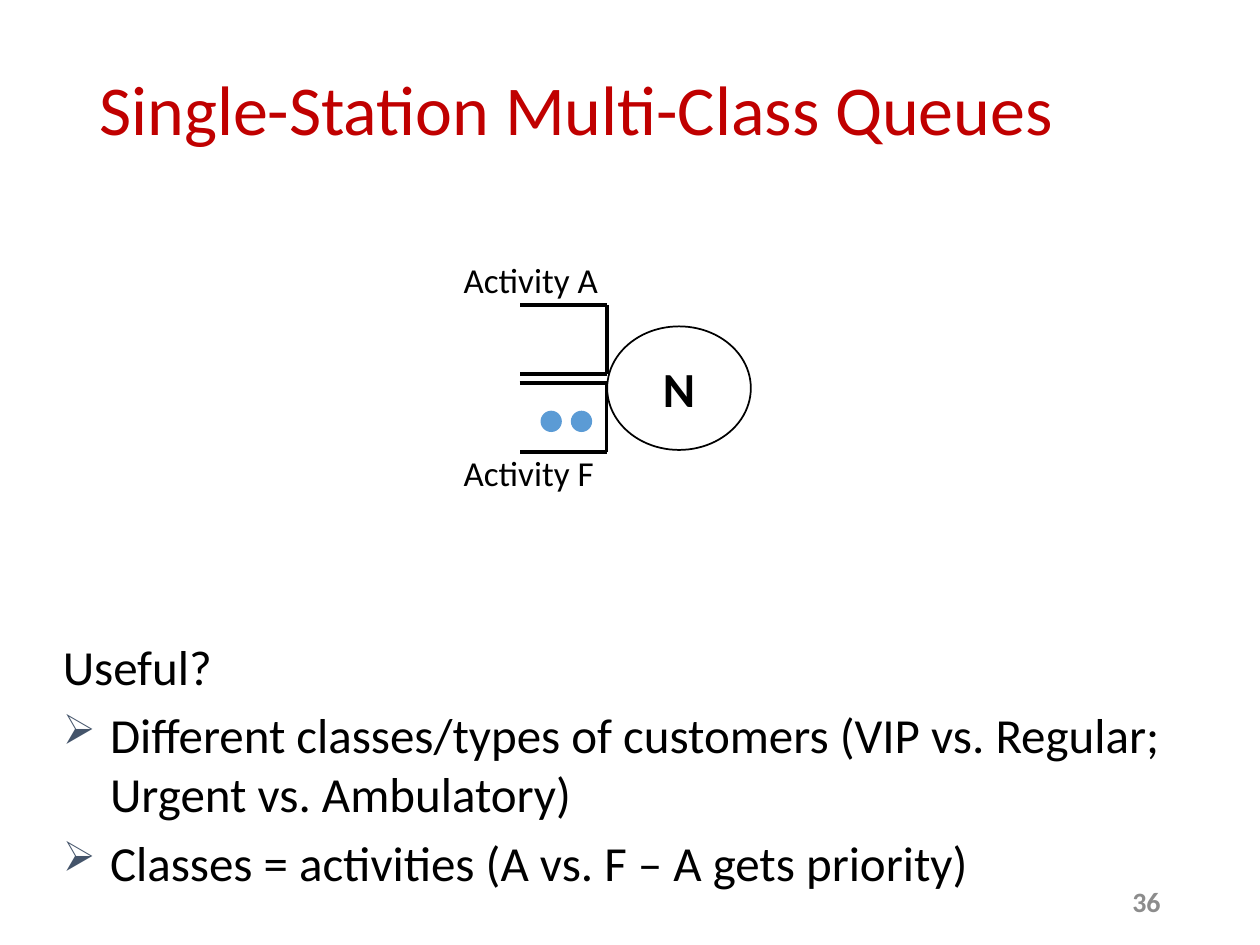
from typing import NamedTuple

from lxml import etree
from pptx import Presentation
from pptx.dml.color import RGBColor
from pptx.enum.shapes import MSO_CONNECTOR, MSO_SHAPE
from pptx.enum.text import MSO_ANCHOR, PP_ALIGN
from pptx.oxml.ns import qn
from pptx.util import Pt

LEFT, CENTER, RIGHT = PP_ALIGN.LEFT, PP_ALIGN.CENTER, PP_ALIGN.RIGHT
TOP, MIDDLE = MSO_ANCHOR.TOP, MSO_ANCHOR.MIDDLE
ELLIPSE = MSO_SHAPE.OVAL
STRAIGHT = MSO_CONNECTOR.STRAIGHT

FONT = "Calibri"
BLACK, RED, GRAY = "000000", "C00000", "8C8C8C"
BLUE, SLATE = "5B9BD5", "44546A"
BODY_SIZE = 28
BULLET_INDENT = 27


class Box(NamedTuple):
    left: float
    top: float
    width: float
    height: float

    def lengths(self) -> list:
        return [Pt(value) for value in self]


class Queue(NamedTuple):
    label: str
    label_top: float
    box: Box


QUEUES = [
    Queue("Activity A", 144, Box(297.4, 174.2, 49.6, 39.6)),
    Queue("Activity F", 254.2, Box(297, 218.9, 49.6, 39.6)),
]
STATION = Box(347, 186.5, 82.1, 70.6)
CUSTOMER_SIZE = 12.2
CUSTOMER_LEFTS = (326.2, 308.9)
CUSTOMER_TOP = 234.7
REASONS = [
    "Different classes/types of customers (VIP vs. Regular; Urgent vs. Ambulatory)",
    "Classes = activities (A vs. F – A gets priority)",
]


def color(value: str) -> RGBColor:
    return RGBColor.from_string(value)


def write(paragraph, text: str, *, size=20, fill=BLACK, bold=False, align=LEFT) -> None:
    paragraph.alignment = align
    run = paragraph.add_run()
    run.text = text
    run.font.name = FONT
    run.font.size = Pt(size)
    run.font.bold = bold
    run.font.color.rgb = color(fill)


def add_text_box(slide, box: Box, anchor=TOP):
    frame = slide.shapes.add_textbox(*box.lengths()).text_frame
    frame.word_wrap = True
    frame.vertical_anchor = anchor
    return frame


def add_bullet(paragraph) -> None:
    properties = paragraph._p.get_or_add_pPr()
    properties.set("marL", str(Pt(BULLET_INDENT)))
    properties.set("indent", str(-Pt(BULLET_INDENT)))
    bullet_color = etree.SubElement(properties, qn("a:buClr"))
    etree.SubElement(bullet_color, qn("a:srgbClr"), val=SLATE)
    etree.SubElement(properties, qn("a:buSzPct"), val="85000")
    etree.SubElement(properties, qn("a:buChar"), char="➢")


def add_ellipse(slide, box: Box, fill=None, line=None):
    shape = slide.shapes.add_shape(ELLIPSE, *box.lengths())
    shape.shadow.inherit = False
    if fill:
        shape.fill.solid()
        shape.fill.fore_color.rgb = color(fill)
    else:
        shape.fill.background()
    if line:
        shape.line.color.rgb = color(line)
        shape.line.width = Pt(1)
    else:
        shape.line.fill.background()
    return shape


def add_queue(slide, box: Box) -> None:
    """Three lines, open on the side where customers arrive."""
    right, bottom = box.left + box.width, box.top + box.height
    corners = [(box.left, box.top), (right, box.top), (right, bottom), (box.left, bottom)]
    for start, end in zip(corners, corners[1:]):
        ends = [Pt(value) for value in start + end]
        connector = slide.shapes.add_connector(STRAIGHT, *ends)
        connector.line.color.rgb = color(BLACK)
        connector.line.width = Pt(2.25)
        etree.SubElement(connector._element.spPr, qn("a:effectLst"))


def main() -> None:
    presentation = Presentation()
    presentation.slide_width, presentation.slide_height = Pt(720), Pt(540)
    slide = presentation.slides.add_slide(presentation.slide_layouts[6])

    # Title and slide number
    title = add_text_box(slide, Box(49.7, 12.2, 620.6, 104.4), MIDDLE).paragraphs[0]
    title.line_spacing = 0.9
    write(title, "Single-Station Multi-Class Queues", size=40, fill=RED)
    number = add_text_box(slide, Box(508.3, 500.4, 162, 28.8), MIDDLE).paragraphs[0]
    write(number, "36", size=16, fill=GRAY, bold=True, align=RIGHT)

    # Question and its bulleted answers
    body = add_text_box(slide, Box(28.8, 360, 642.2, 197.3))
    for index, text in enumerate(["Useful?", *REASONS]):
        paragraph = body.add_paragraph() if index else body.paragraphs[0]
        paragraph.space_before = Pt(0.2 * BODY_SIZE)
        write(paragraph, text, size=BODY_SIZE)
        if index:
            add_bullet(paragraph)

    # Queues with their labels
    for queue in QUEUES:
        add_queue(slide, queue.box)
        label = add_text_box(slide, Box(257.8, queue.label_top, 111.6, 31.7))
        write(label.paragraphs[0], queue.label)

    # Station and waiting customers
    station = add_ellipse(slide, STATION, line=BLACK).text_frame
    station.vertical_anchor = MIDDLE
    write(station.paragraphs[0], "N", size=28, bold=True, align=CENTER)
    for left in CUSTOMER_LEFTS:
        add_ellipse(slide, Box(left, CUSTOMER_TOP, CUSTOMER_SIZE, CUSTOMER_SIZE), fill=BLUE)

    presentation.save("out.pptx")


if __name__ == "__main__":
    main()
